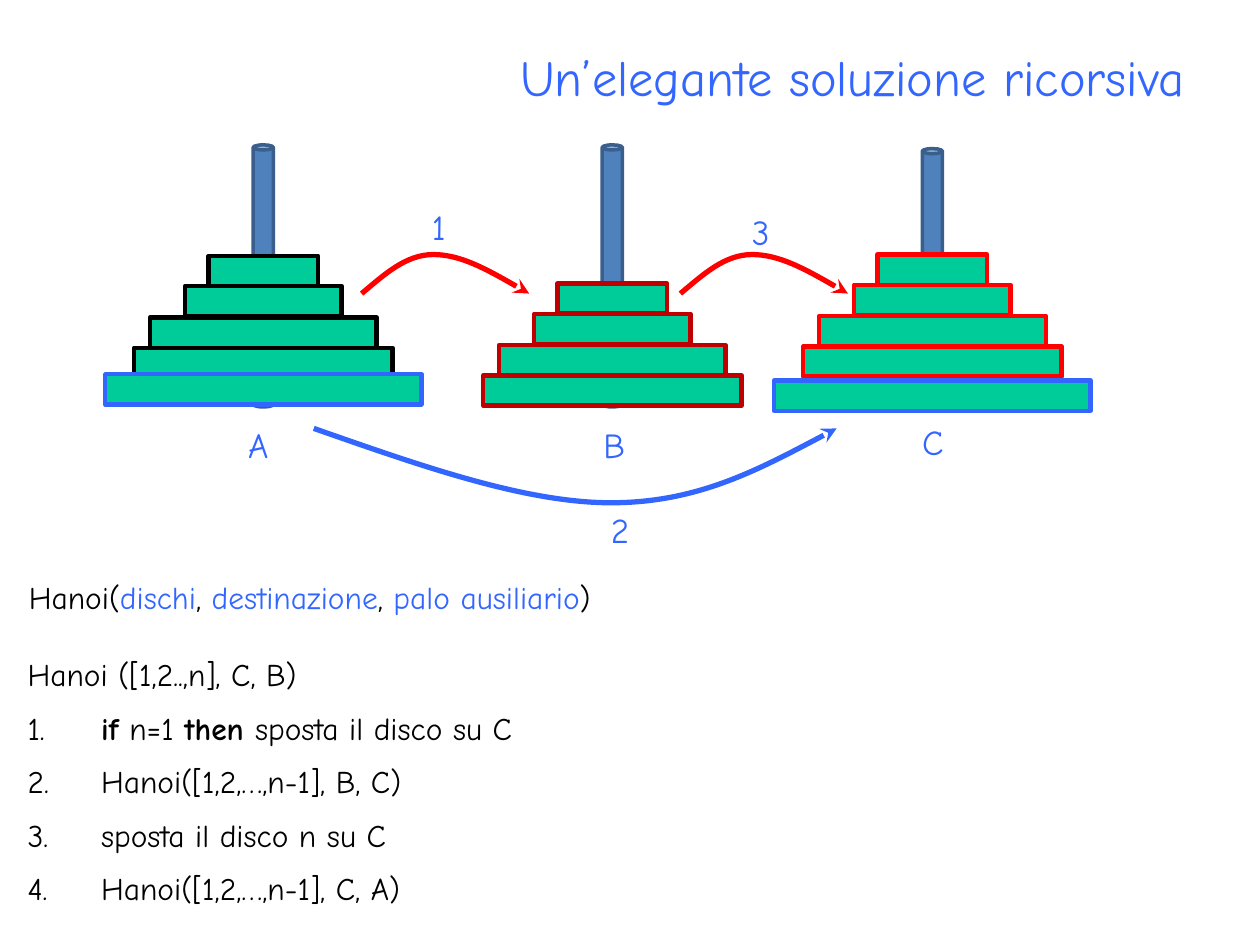
from lxml.etree import SubElement
from pptx import Presentation
from pptx.dml.color import RGBColor
from pptx.enum.shapes import MSO_SHAPE
from pptx.enum.text import MSO_ANCHOR, MSO_AUTO_SIZE, PP_ALIGN
from pptx.oxml.ns import qn
from pptx.util import Inches, Pt

FONT = "Comic Neue"
BLUE = RGBColor(0x33, 0x66, 0xFF)
BLACK = RGBColor(0, 0, 0)
WHITE = RGBColor(0xFF, 0xFF, 0xFF)
GREEN = RGBColor(0x00, 0xCC, 0x99)
RED = RGBColor(0xFF, 0, 0)
DARK_RED = RGBColor(0xC0, 0, 0)
PEG_FILL = RGBColor(0x4F, 0x81, 0xBD)
PEG_LINE = RGBColor(0x3A, 0x5F, 0x8C)

# Content
TITLE = "Un’elegante soluzione ricorsiva"
DISC_HEIGHT = 0.24
BASE_WIDTH = 2.51
DISCS = [(0.87, 0), (1.24, 0.24), (1.8, 0.49), (2.05, 0.73)]  # width, drop from top disc
# centre, peg top, top of smallest disc, top of base disc, outline
TOWERS = [
    (2.09, 1.15, 2.03, 2.97, BLACK),
    (4.86, 1.15, 2.25, None, DARK_RED),
    (7.4, 1.18, 2.02, 3.02, RED),
]
# text, left, top, width
LABELS = [
    ("A", 1.87, 3.31, 0.41), ("B", 4.69, 3.31, 0.38), ("C", 7.22, 3.29, 0.45),
    ("1", 3.33, 1.58, 0.33), ("2", 4.75, 3.99, 0.37), ("3", 5.87, 1.62, 0.37),
]
HOP = [(0, 0.31), (0.18, 0.16), (0.35, 0), (0.57, 0),
       (0.79, 0), (1.07, 0.16), (1.33, 0.31)]
SWEEP = [(0, 0), (0.83, 0.29), (1.67, 0.59), (2.36, 0.59),
         (3.05, 0.59), (3.6, 0.29), (4.15, 0)]
# left, top, Bezier points, colour
MOVES = [(2.87, 2.02, HOP, RED), (5.4, 2.02, HOP, RED), (2.49, 3.4, SWEEP, BLUE)]
# numbered, spans of (text, bold, colour)
ALGORITHM = [
    (False, [("Hanoi ([1,2..,n], C, B)", False, BLACK)]),
    (True, [(" ", False, BLACK), ("if", True, BLACK), (" n=1 ", False, BLACK),
            ("then ", True, BLACK), ("sposta il disco su C", False, BLACK)]),
    (True, [(" Hanoi([1,2,…,n-1], B, C)", False, BLACK)]),
    (True, [(" sposta il disco n su C", False, BLACK)]),
    (True, [(" Hanoi([1,2,…,n-1], C, A)", False, BLACK)]),
]
SIGNATURE = [
    (False, [("Hanoi(", False, BLACK), ("dischi", False, BLUE), (", ", False, BLACK),
             ("destinazione", False, BLUE), (", ", False, BLACK),
             ("palo ausiliario", False, BLUE), (")", False, BLACK)]),
]


def add_span(para, text, size, color, bold=False):
    span = para.add_run()
    span.text = text
    span.font.name = FONT
    span.font.size = Pt(size)
    span.font.bold = bold
    span.font.color.rgb = color


def add_block(page, kind, left, top, width, height, fill, line=None, weight=2.5):
    block = page.shapes.add_shape(kind, Inches(left), Inches(top),
                                  Inches(width), Inches(height))
    block.shadow.inherit = False
    block.fill.solid()
    block.fill.fore_color.rgb = fill
    if line is None:
        block.line.fill.background()
    else:
        block.line.color.rgb = line
        block.line.width = Pt(weight)
    return block


def add_disc(page, center, top, width, line):
    add_block(page, MSO_SHAPE.RECTANGLE, center - width / 2, top,
              width, DISC_HEIGHT, GREEN, line)


def add_move(page, left, top, points, color):
    corners = [(Inches(left + x), Inches(top + y)) for x, y in points]
    builder = page.shapes.build_freeform(*corners[0])
    builder.add_line_segments(corners[1:], close=False)
    arrow = builder.convert_to_shape()
    arrow.shadow.inherit = False
    arrow.fill.background()
    arrow.line.color.rgb = color
    arrow.line.width = Pt(3)
    # Turn each three segments into one Bezier curve
    outline = next(arrow.element.iter(qn("a:path")))
    segments = outline.findall(qn("a:lnTo"))
    for start in range(0, len(segments), 3):
        curve = SubElement(outline, qn("a:cubicBezTo"))
        for segment in segments[start:start + 3]:
            curve.append(segment[0])
            outline.remove(segment)
    SubElement(arrow.line._get_or_add_ln(), qn("a:tailEnd"), type="stealth")


def add_code(page, left, top, width, height, paragraphs):
    box = add_block(page, MSO_SHAPE.RECTANGLE, left, top, width, height, WHITE)
    frame = box.text_frame
    frame.word_wrap = True
    frame.vertical_anchor = MSO_ANCHOR.TOP
    frame.auto_size = MSO_AUTO_SIZE.SHAPE_TO_FIT_TEXT
    for index, (numbered, spans) in enumerate(paragraphs):
        para = frame.add_paragraph() if index else frame.paragraphs[0]
        para.alignment = PP_ALIGN.LEFT
        # Hanging indent, half a line before, automatic number
        settings = para._p.get_or_add_pPr()
        settings.set("marL", str(Inches(0.5)))
        settings.set("indent", str(Inches(-0.5)))
        before = SubElement(settings, qn("a:spcBef"))
        SubElement(before, qn("a:spcPct"), val="50000")
        if numbered:
            SubElement(settings, qn("a:buFont"), typeface=FONT)
            SubElement(settings, qn("a:buAutoNum"), type="arabicPeriod")
        for text, bold, color in spans:
            add_span(para, text, 18, color, bold)


def main():
    deck = Presentation()
    deck.slide_width, deck.slide_height = Inches(10), Inches(7.5)
    page = deck.slides.add_slide(deck.slide_layouts[5])

    # Title
    title = page.shapes.title
    title.left, title.top = Inches(0.5), Inches(0.3)
    title.width, title.height = Inches(9), Inches(0.61)
    title.text_frame.vertical_anchor = MSO_ANCHOR.MIDDLE
    title.text_frame.auto_size = MSO_AUTO_SIZE.NONE
    para = title.text_frame.paragraphs[0]
    para.alignment = PP_ALIGN.RIGHT
    add_span(para, TITLE, 28.8, BLUE)

    # Towers
    for center, peg_top, disc_top, base_top, line in TOWERS:
        add_block(page, MSO_SHAPE.CAN, center - 0.08, peg_top, 0.16, 2.08,
                  PEG_FILL, PEG_LINE, 2)
        for width, drop in DISCS:
            add_disc(page, center, disc_top + drop, width, line)
        if base_top is not None:
            add_disc(page, center, base_top, BASE_WIDTH, BLUE)

    # Moves and labels
    for move in MOVES:
        add_move(page, *move)
    for text, left, top, width in LABELS:
        box = page.shapes.add_textbox(Inches(left), Inches(top),
                                      Inches(width), Inches(0.44))
        box.text_frame.word_wrap = False
        box.text_frame.auto_size = MSO_AUTO_SIZE.SHAPE_TO_FIT_TEXT
        add_span(box.text_frame.paragraphs[0], text, 20, BLUE)

    # Pseudocode
    add_code(page, 0.12, 5.15, 4.49, 2.22, ALGORITHM)
    add_code(page, 0.13, 4.54, 5.11, 0.4, SIGNATURE)

    deck.save("out.pptx")


if __name__ == "__main__":
    main()
